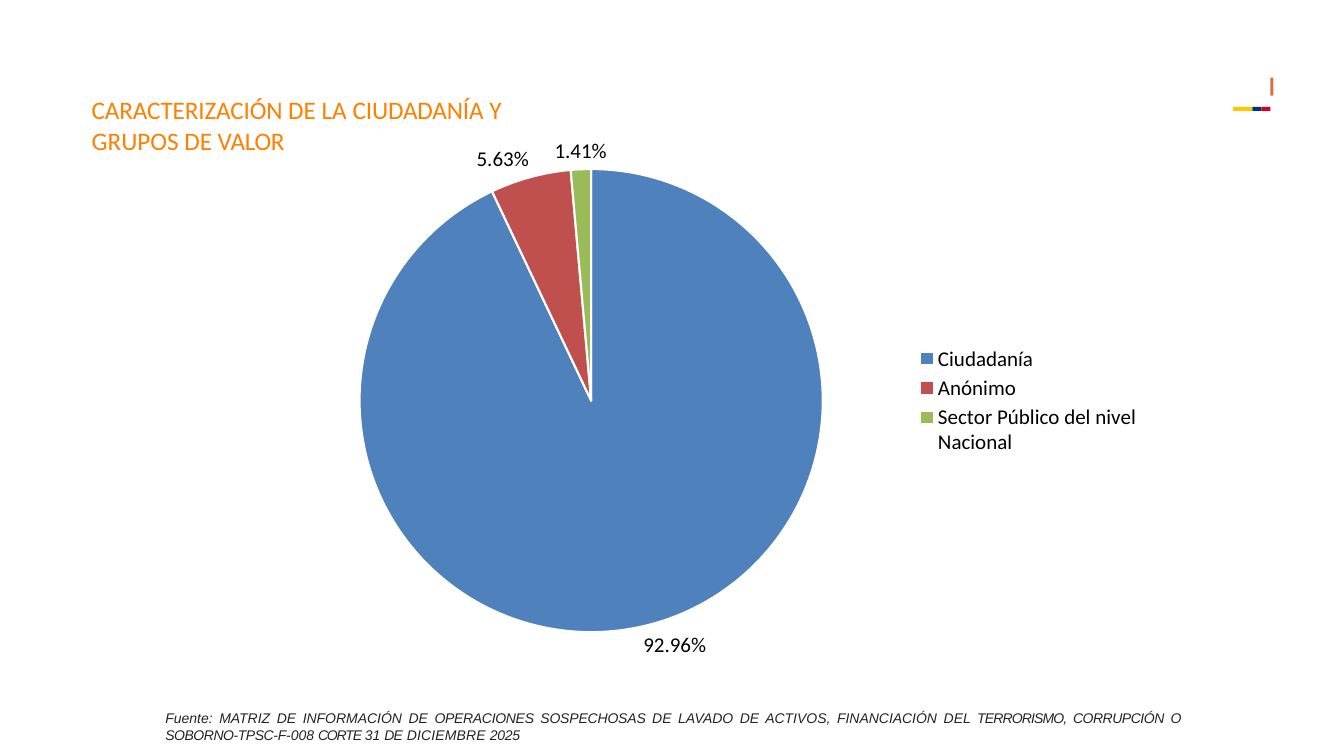
from lxml.etree import fromstring
from pptx import Presentation
from pptx.chart.data import CategoryChartData
from pptx.dml.color import RGBColor
from pptx.enum.chart import XL_CHART_TYPE, XL_LABEL_POSITION, XL_LEGEND_POSITION
from pptx.enum.text import MSO_ANCHOR, PP_ALIGN
from pptx.enum.shapes import MSO_SHAPE
from pptx.util import Inches, Pt

BARS = [
    (12.6, 0.77, 0.03, 0.18, "D6713E"),
    (12.23, 1.06, 0.19, 0.04, "FFC700"),
    (12.42, 1.06, 0.09, 0.04, "003088"),
    (12.51, 1.06, 0.09, 0.04, "D70024"),
]
TITLE = [
    [("CARACTERIZACIÓN ", -0.1), ("DE LA ", 0), ("CIUDADANÍA ", -0.1), ("Y", -0.5)],
    [("GRUPOS DE", 0), (" VALOR", -0.2)],
]
SOURCE = [[
    ("Fuente: MATRIZ DE INFORMACIÓN DE ", 0), ("OPERACIONES ", -0.2),
    ("SOSPECHOSAS ", -0.1), ("DE LAVADO DE ACTIVOS, FINANCIACIÓN DEL ", 0),
    ("TERRORISMO, ", -0.6), ("CORRUPCIÓN ", -0.3), ("O ", -0.5),
    ("SOBORNO-TPSC-", -0.3), ("F-", -0.1), ("008 ", 0), ("CORTE ", -0.8),
    ("31 ", 0), ("DE", -0.5), (" DICIEMBRE ", 0.1), ("2025", -0.2),
]]
SLICES = [
    ("Ciudadanía", 92.96, "4F81BD"),
    ("Anónimo", 5.63, "C0504D"),
    ("Sector Público del nivel Nacional", 1.41, "9BBB59"),
]
PLOT = {"x": 0.1, "y": 0.08, "w": 0.53, "h": 0.84}
NS = "http://schemas.openxmlformats.org/drawingml/2006/chart"


def paint(color, code):
    color.rgb = RGBColor.from_string(code)


def style(font, code, **values):
    for name, value in values.items():
        setattr(font, name, value)
    paint(font.color, code)


def place(shape, *box):
    for name, value in zip(("left", "top", "width", "height"), box):
        setattr(shape, name, Inches(value))


def add_bar(slide, x, y, w, h, code):
    bar = slide.shapes.add_shape(MSO_SHAPE.RECTANGLE, *map(Inches, (x, y, w, h)))
    bar.shadow.inherit = False
    bar.fill.solid()
    paint(bar.fill.fore_color, code)
    bar.line.fill.background()


def write(shape, lines, align, code, **values):
    frame = shape.text_frame
    frame.word_wrap = True
    frame.vertical_anchor = MSO_ANCHOR.TOP
    frame.margin_left = frame.margin_right = frame.margin_bottom = 0
    frame.margin_top = Inches(0.02)
    for num, line in enumerate(lines):
        para = frame.add_paragraph() if num else frame.paragraphs[0]
        para.alignment = align
        para.space_before = Pt(0)
        para._p.get_or_add_pPr().set("marL", str(Inches(0.01)))
        for text, gap in line:
            run = para.add_run()
            run.text = text
            style(run.font, code, **values)
            run._r.get_or_add_rPr().set("spc", str(round(gap * 100)))


def set_plot(chart):
    area = chart._chartSpace.chart.plotArea
    for old in area.findall(f"{{{NS}}}layout"):
        area.remove(old)
    parts = "".join(f'<c:{key}Mode val="edge"/>' for key in "xy")
    parts += "".join(f'<c:{key} val="{val}"/>' for key, val in PLOT.items())
    area.insert(0, fromstring(
        f'<c:layout xmlns:c="{NS}"><c:manualLayout>'
        f'<c:layoutTarget val="inner"/>{parts}</c:manualLayout></c:layout>'))


def add_pie(slide, *box):
    data = CategoryChartData()
    data.categories = [name for name, _, _ in SLICES]
    data.add_series("Series 1", [value for _, value, _ in SLICES])
    chart = slide.shapes.add_chart(XL_CHART_TYPE.PIE, *map(Inches, box), data).chart
    chart.has_title = False
    style(chart.font, "000000", name="Calibri", size=Pt(10))
    chart.has_legend = True
    chart.legend.position = XL_LEGEND_POSITION.RIGHT
    chart.legend.include_in_layout = False
    plot = chart.plots[0]
    plot.vary_by_categories = True
    for num, (_, _, code) in enumerate(SLICES):
        form = plot.series[0].points[num].format
        form.fill.solid()
        paint(form.fill.fore_color, code)
        paint(form.line.color, "FFFFFF")
        form.line.width = Pt(1.5)
    labels = plot.series[0].data_labels
    labels.show_value = False
    labels.show_percentage = True
    labels.number_format = "0.00%"
    labels.number_format_is_linked = False
    labels.position = XL_LABEL_POSITION.OUTSIDE_END
    for font in (labels.font, chart.legend.font):
        style(font, "000000", name="Calibri", size=Pt(15))
    set_plot(chart)


def main():
    deck = Presentation()
    deck.slide_width = Inches(13.33)
    deck.slide_height = Inches(7.5)
    slide = deck.slides.add_slide(deck.slide_layouts[5])
    for bar in BARS:
        add_bar(slide, *bar)
    note = slide.shapes.add_textbox(*map(Inches, (1.63, 7.02, 10.08, 0.36)))
    write(note, SOURCE, PP_ALIGN.JUSTIFY, "242424",
          name="Arial", size=Pt(10), italic=True)
    title = slide.shapes.title
    place(title, 0.9, 0.92, 4.13, 0.63)
    write(title, TITLE, PP_ALIGN.LEFT, "FD8000", name="Calibri", size=Pt(18))
    add_pie(slide, 2.67, 1.24, 8.75, 5.47)
    deck.save("out.pptx")


if __name__ == "__main__":
    main()
